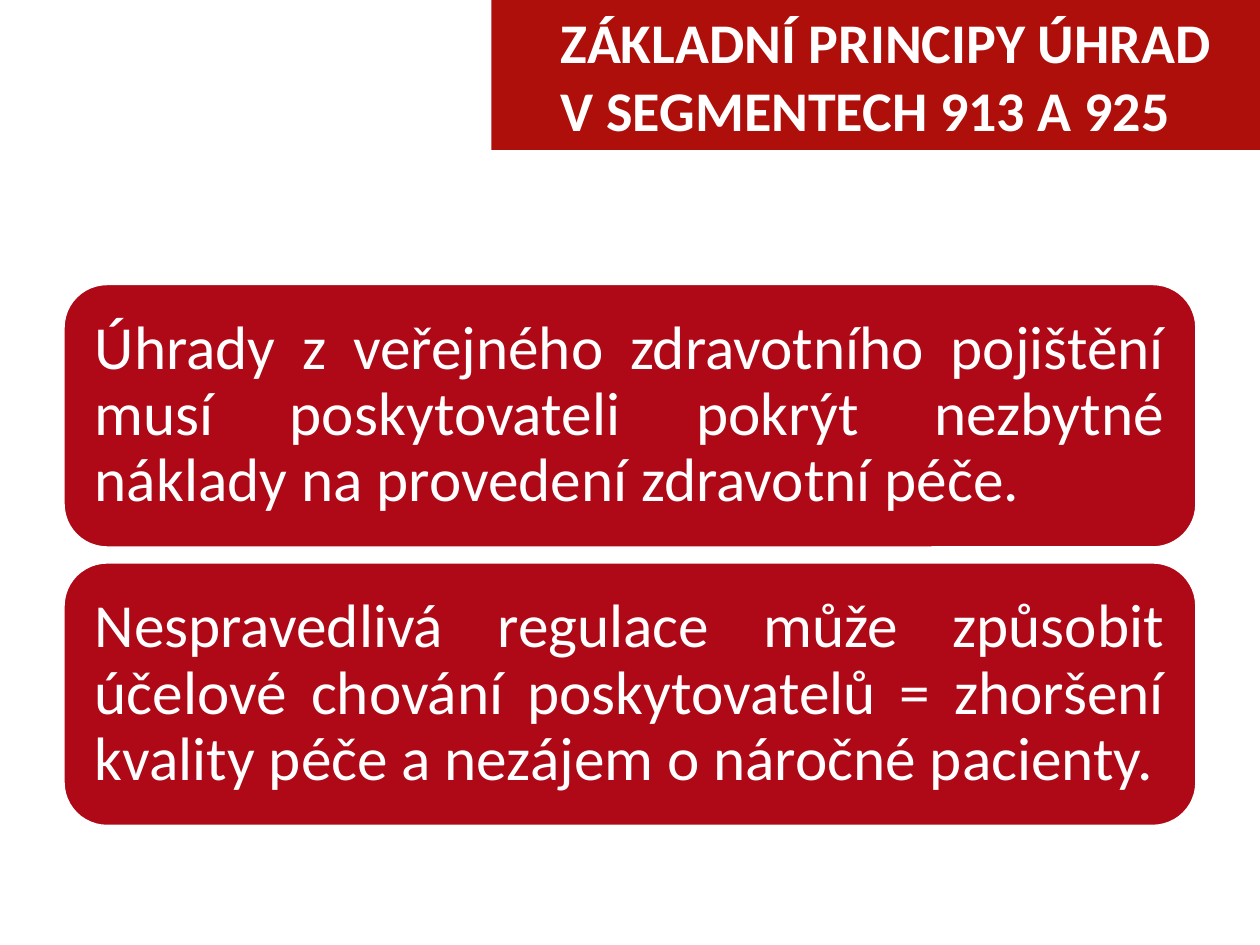
"""Build a slide on payment principles with a title banner and two statement cards."""
from dataclasses import dataclass
from typing import Optional

from pptx import Presentation
from pptx import util as u
from pptx.dml.color import RGBColor
from pptx.enum import shapes, text
from pptx.slide import Slide

WHITE = "FFFFFF"
CARD_TOP, CARD_PITCH = 2.25, 2.21
STATEMENTS = (
    "Úhrady z veřejného zdravotního pojištění musí poskytovateli pokrýt "
    "nezbytné náklady na provedení zdravotní péče.",
    "Nespravedlivá regulace může způsobit účelové chování poskytovatelů = "
    "zhoršení kvality péče a nezájem o náročné pacienty.",
)


@dataclass(frozen=True)
class Panel:
    wording: str
    box: tuple[float, float, float, float]
    insets: tuple[float, float, float, float]
    fill: str
    size: float
    kind: shapes.MSO_SHAPE = shapes.MSO_SHAPE.RECTANGLE
    align: text.PP_ALIGN = text.PP_ALIGN.LEFT
    line_spacing: float = 1.0
    bold: bool = False
    outline: Optional[str] = None


def color(value: str) -> RGBColor:
    return RGBColor.from_string(value)


def draw_panel(slide: Slide, panel: Panel) -> None:
    shape = slide.shapes.add_shape(panel.kind, *map(u.Inches, panel.box))
    shape.shadow.inherit = False
    shape.fill.solid()
    shape.fill.fore_color.rgb = color(panel.fill)
    if panel.outline:
        shape.line.color.rgb = color(panel.outline)
        shape.line.width = u.Pt(2)
    else:
        shape.line.fill.background()

    frame = shape.text_frame
    frame.word_wrap = True
    frame.vertical_anchor = text.MSO_ANCHOR.MIDDLE
    (frame.margin_left, frame.margin_top,
     frame.margin_right, frame.margin_bottom) = map(u.Inches, panel.insets)
    frame.text = panel.wording
    paragraph = frame.paragraphs[0]
    paragraph.alignment = panel.align
    paragraph.line_spacing = panel.line_spacing
    font = paragraph.runs[0].font
    font.name = "Calibri"
    font.size = u.Pt(panel.size)
    font.bold = panel.bold
    font.color.rgb = color(WHITE)


def main() -> None:
    presentation = Presentation()
    presentation.slide_width = u.Inches(10)
    presentation.slide_height = u.Inches(7.5)
    slide = presentation.slides.add_slide(presentation.slide_layouts[6])

    for index, statement in enumerate(STATEMENTS):
        draw_panel(slide, Panel(
            statement, (0.5, CARD_TOP + index * CARD_PITCH, 9, 2.1), (0.15,) * 4,
            "AF0817", 35, kind=shapes.MSO_SHAPE.ROUNDED_RECTANGLE,
            align=text.PP_ALIGN.JUSTIFY, line_spacing=0.9, outline=WHITE))
    draw_panel(slide, Panel(
        "ZÁKLADNÍ PRINCIPY ÚHRAD V SEGMENTECH 913 A 925",
        (3.9, 0, 6.1, 1.19), (0.55, 0.05, 0.1, 0.05), "AF0F0A", 32, bold=True))

    presentation.save("out.pptx")


if __name__ == "__main__":
    main()
